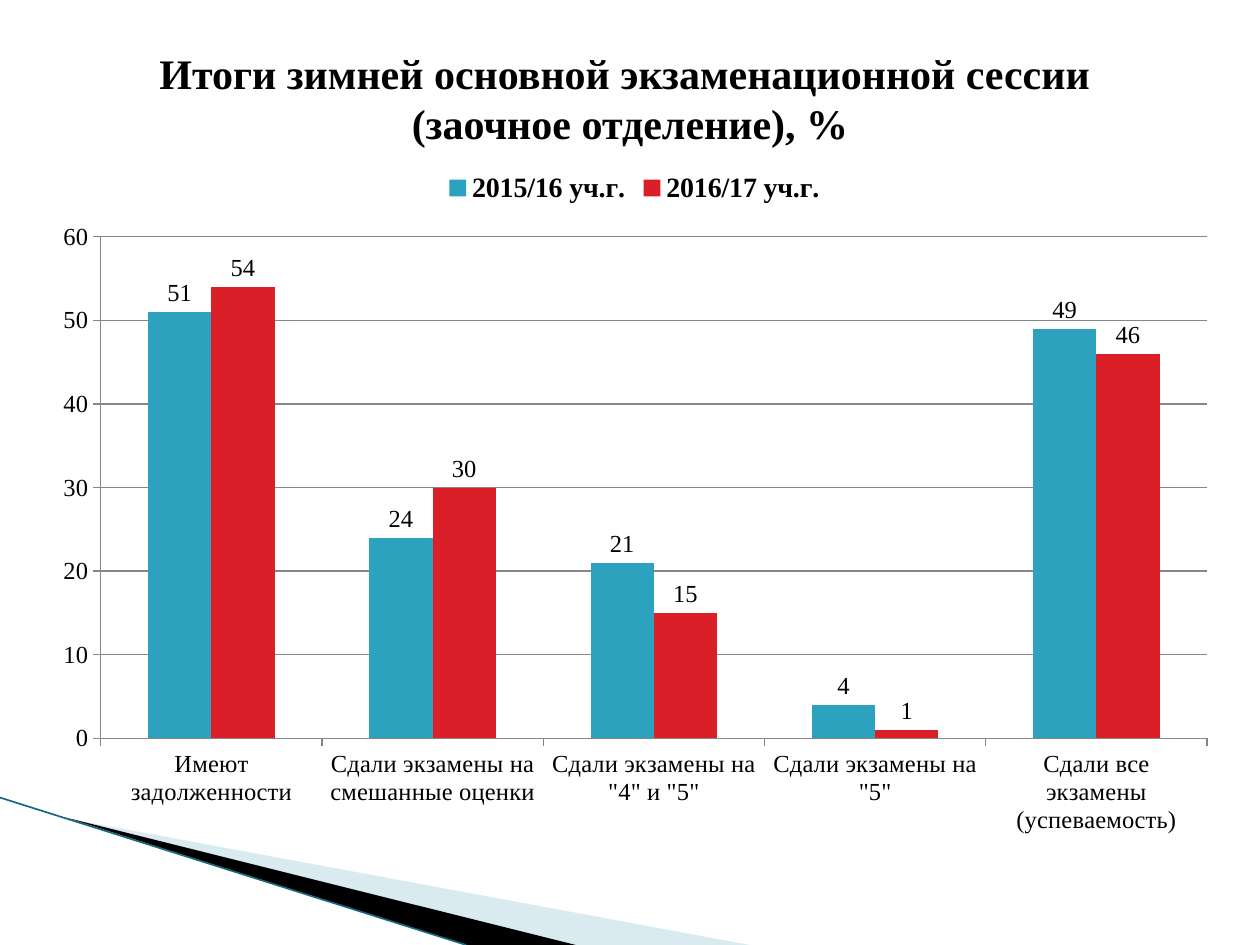
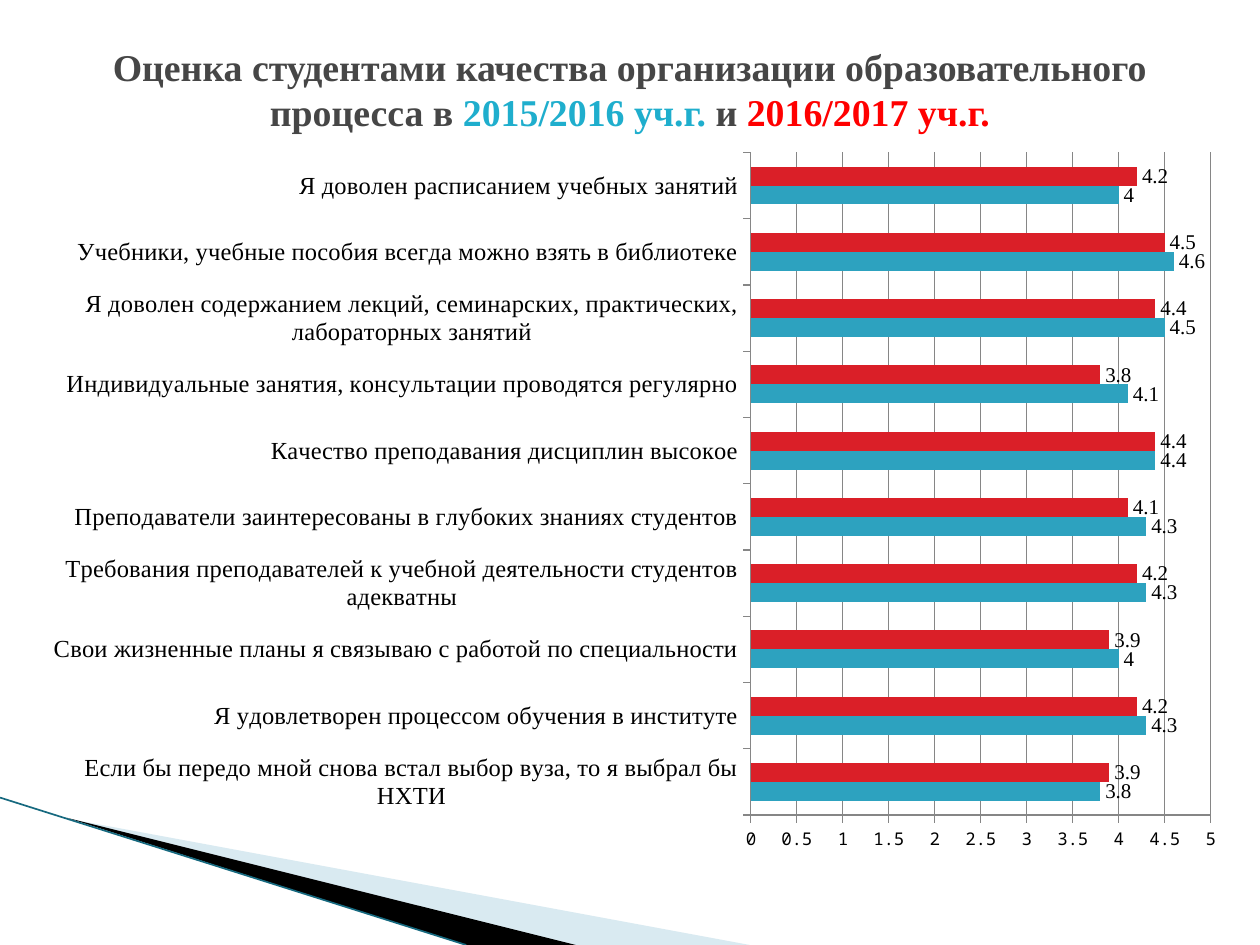
from dataclasses import dataclass

import lxml.etree
import pptx
import pptx.chart.data
import pptx.dml.color
import pptx.enum.chart
import pptx.enum.shapes
import pptx.enum.text
import pptx.oxml
import pptx.oxml.ns
import pptx.util

Inches = pptx.util.Inches
qn = pptx.oxml.ns.qn
TITLE_ONLY = 5


@dataclass(frozen=True)
class Theme:
    serif: str = "Times New Roman"
    mono: str = "Noto Sans Mono"
    black: str = "000000"
    heading_grey: str = "464646"
    first_year: str = "2DA2BF"
    second_year: str = "DA1F28"
    first_year_text: str = "1FAECD"
    second_year_text: str = "FF0000"
    pale_band: str = "A0CBDC"
    band_edge: str = "16697F"
    grid: str = "868686"
    session_title: float = 24
    survey_title: float = 21.6
    legend: float = 16
    body: float = 14
    bar_value: float = 12
    scale: float = 10


THEME = Theme()

SESSION_RESULTS = [
    ("Имеют задолженности", 51, 54),
    ("Сдали экзамены на смешанные оценки", 24, 30),
    ('Сдали экзамены на "4" и "5"', 21, 15),
    ('Сдали экзамены на "5"', 4, 1),
    ("Сдали все экзамены (успеваемость)", 49, 46),
]

SURVEY_SCORES = [
    ("Если бы передо мной снова встал выбор вуза, то я выбрал бы НХТИ", 3.8, 3.9),
    ("Я удовлетворен процессом обучения в институте", 4.3, 4.2),
    ("Свои жизненные планы я связываю с работой по специальности", 4, 3.9),
    ("Требования преподавателей к учебной деятельности студентов адекватны", 4.3, 4.2),
    ("Преподаватели заинтересованы в глубоких знаниях студентов", 4.3, 4.1),
    ("Качество преподавания дисциплин высокое", 4.4, 4.4),
    ("Индивидуальные занятия, консультации проводятся регулярно", 4.1, 3.8),
    ("Я доволен содержанием лекций, семинарских, практических, лабораторных занятий", 4.5, 4.4),
    ("Учебники, учебные пособия всегда можно взять в библиотеке", 4.6, 4.5),
    ("Я доволен расписанием учебных занятий", 4, 4.2),
]


def rgb(color):
    return pptx.dml.color.RGBColor.from_string(color)


def set_font(font, name, size, color=THEME.black, bold=False):
    font.name = name
    font.size = pptx.util.Pt(size)
    font.bold = bold
    font.color.rgb = rgb(color)


def add_band(slide, corners, color, opacity=100):
    start, *others = [(Inches(x), Inches(y)) for x, y in corners]
    outline = slide.shapes.build_freeform(*start)
    outline.add_line_segments(others, close=True)
    band = outline.convert_to_shape()
    band.shadow.inherit = False
    band.line.fill.background()
    band.fill.solid()
    band.fill.fore_color.rgb = rgb(color)
    if opacity < 100:
        color_element = band.fill._xPr.find(".//" + qn("a:srgbClr"))
        alpha = lxml.etree.SubElement(color_element, qn("a:alpha"))
        alpha.set("val", str(opacity * 1000))


def add_corner_bands(slide):
    add_band(slide, [(0.55, 6.5), (5.95, 7.5), (4.56, 7.5)], THEME.pale_band, 40)
    add_band(slide, [(0.53, 6.49), (4.57, 7.5), (3.7, 7.5)], THEME.black)
    edge = slide.shapes.add_connector(
        pptx.enum.shapes.MSO_CONNECTOR.STRAIGHT,
        Inches(0), Inches(6.33), Inches(3.7), Inches(7.5))
    edge.line.color.rgb = rgb(THEME.band_edge)
    edge.line.width = pptx.util.Pt(0.95)
    lxml.etree.SubElement(edge._element.spPr, qn("a:effectLst"))


def set_title(slide, box, size, parts):
    """Fill the title with (text, colour) parts; a vertical tab breaks the line."""
    title = slide.shapes.title
    title.left, title.top, title.width, title.height = map(Inches, box)
    frame = title.text_frame
    frame.auto_size = pptx.enum.text.MSO_AUTO_SIZE.NONE
    frame.vertical_anchor = pptx.enum.text.MSO_ANCHOR.MIDDLE
    heading = frame.paragraphs[0]
    heading.alignment = pptx.enum.text.PP_ALIGN.CENTER
    heading.font.name = THEME.serif
    heading.font.size = pptx.util.Pt(size)
    heading.font.bold = True
    for text, color in parts:
        for index, line in enumerate(text.split("\v")):
            if index:
                heading.add_line_break()
            run = heading.add_run()
            run.text = line
            run.font.color.rgb = rgb(color)


def place_plot(chart, box, plot_box):
    """Fix the inner plot area; both boxes are in inches on the slide."""
    left, top, width, height = box
    x, y, w, h = plot_box
    fractions = {"x": (x - left) / width, "y": (y - top) / height,
                 "w": w / width, "h": h / height}
    settings = {"layoutTarget": "inner", "xMode": "edge", "yMode": "edge"}
    settings.update({name: f"{value:.4f}" for name, value in fractions.items()})
    plot_area = chart._chartSpace.chart.plotArea
    for old_layout in plot_area.findall(qn("c:layout")):
        plot_area.remove(old_layout)
    layout = lxml.etree.Element(qn("c:layout"))
    manual = lxml.etree.SubElement(layout, qn("c:manualLayout"))
    for name, value in settings.items():
        lxml.etree.SubElement(manual, qn("c:" + name)).set("val", value)
    plot_area.insert(0, layout)


def format_axis(axis, font_name, size):
    axis.major_tick_mark = pptx.enum.chart.XL_TICK_MARK.OUTSIDE
    axis.minor_tick_mark = pptx.enum.chart.XL_TICK_MARK.NONE
    set_font(axis.tick_labels.font, font_name, size)
    axis.format.line.color.rgb = rgb(THEME.grid)
    axis.format.line.width = pptx.util.Pt(0.75)


def add_year_chart(slide, kind, box, plot_box, rows, years, top_value, step,
                   scale_font, value_size):
    """Compare two years, given as rows of (category, first, second)."""
    categories, *year_values = zip(*rows)
    data = pptx.chart.data.CategoryChartData()
    data.categories = categories
    for year, values in zip(years, year_values):
        data.add_series(year, values)
    chart = slide.shapes.add_chart(kind, *map(Inches, box), data).chart
    chart.has_title = False
    chart.has_legend = False
    set_font(chart.font, *scale_font)
    place_plot(chart, box, plot_box)

    format_axis(chart.category_axis, THEME.serif, THEME.body)
    scale = chart.value_axis
    format_axis(scale, *scale_font)
    scale.minimum_scale, scale.maximum_scale, scale.major_unit = 0, top_value, step
    scale.has_major_gridlines = True
    scale.major_gridlines.format.line.color.rgb = rgb(THEME.grid)
    scale.major_gridlines.format.line.width = pptx.util.Pt(0.75)

    plot = chart.plots[0]
    plot.vary_by_categories = False
    plot.gap_width = 150
    for series, color in zip(plot.series, (THEME.first_year, THEME.second_year)):
        series.format.fill.solid()
        series.format.fill.fore_color.rgb = rgb(color)
        labels = series.data_labels
        labels.show_value = True
        labels.position = pptx.enum.chart.XL_LABEL_POSITION.OUTSIDE_END
        set_font(labels.font, THEME.serif, value_size)
    return chart


def add_top_legend(chart):
    chart.has_legend = True
    chart.legend.position = pptx.enum.chart.XL_LEGEND_POSITION.TOP
    chart.legend.include_in_layout = False
    set_font(chart.legend.font, THEME.serif, THEME.legend, bold=True)


def new_slide(deck):
    slide = deck.slides.add_slide(deck.slide_layouts[TITLE_ONLY])
    add_corner_bands(slide)
    return slide


def add_session_slide(deck):
    slide = new_slide(deck)
    set_title(slide, (0.5, 0.3, 9, 0.95), THEME.session_title, [
        ("Итоги зимней основной экзаменационной сессии \v(заочное отделение), %",
         THEME.black)])
    chart = add_year_chart(
        slide, pptx.enum.chart.XL_CHART_TYPE.COLUMN_CLUSTERED,
        (0.31, 1.25, 9.45, 5.47), (0.8, 1.88, 8.78, 3.98),
        SESSION_RESULTS, ("2015/16 уч.г.", "2016/17 уч.г."), 60, 10,
        (THEME.serif, THEME.body), THEME.body)
    add_top_legend(chart)


def add_survey_slide(deck):
    slide = new_slide(deck)
    set_title(slide, (0.5, 0.16, 9, 1.09), THEME.survey_title, [
        ("Оценка студентами качества организации образовательного процесса в ",
         THEME.heading_grey),
        ("2015/2016 уч.г. ", THEME.first_year_text),
        ("и ", THEME.heading_grey),
        ("2016/2017 уч.г.", THEME.second_year_text)])
    add_year_chart(
        slide, pptx.enum.chart.XL_CHART_TYPE.BAR_CLUSTERED,
        (0.23, 1.09, 9.61, 5.78), (5.96, 1.21, 3.65, 5.26),
        SURVEY_SCORES, ("Series 1", "Series 2"), 5, 0.5,
        (THEME.mono, THEME.scale), THEME.bar_value)


def main():
    deck = pptx.Presentation()
    deck.slide_width, deck.slide_height = Inches(10), Inches(7.5)
    add_session_slide(deck)
    add_survey_slide(deck)
    deck.save("out.pptx")


if __name__ == "__main__":
    main()
